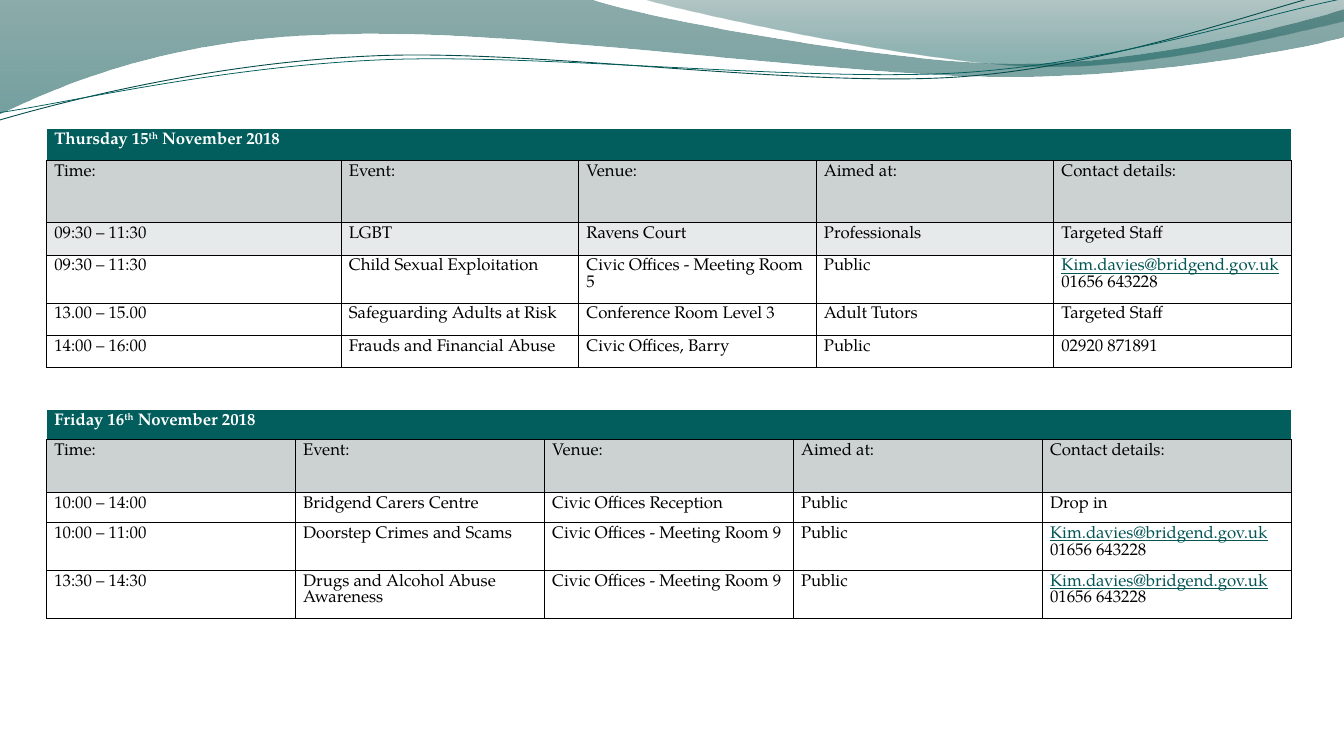
from math import cos, radians, sin

from lxml import etree
from pptx import Presentation
from pptx.dml.color import RGBColor
from pptx.oxml.ns import qn
from pptx.util import Cm, Pt

FONT = "TeX Gyre Pagella"
TEAL, GREY, PALE = "025E5C", "CCD2D2", "E7EAEA"
BLACK, WHITE, LINK = "000000", "FFFFFF", "035654"
TILT = -2.7

HEADS = ["Time:", "Event:", "Venue:", "Aimed at:", "Contact details:"]
KIM = "Kim.davies@bridgend.gov.uk\n01656 643228"
THURSDAY = [
    ["09:30 – 11:30", "LGBT", "Ravens Court", "Professionals", "Targeted Staff"],
    ["09:30 – 11:30", "Child Sexual Exploitation", "Civic Offices - Meeting Room 5", "Public", KIM],
    ["13.00 – 15.00", "Safeguarding Adults at Risk", "Conference Room Level 3", "Adult Tutors",
     "Targeted Staff"],
    ["14:00 – 16:00", "Frauds and Financial Abuse", "Civic Offices, Barry", "Public", "02920 871891"],
]
FRIDAY = [
    ["10:00 – 14:00", "Bridgend Carers Centre", "Civic Offices Reception", "Public", "Drop in"],
    ["10:00 – 11:00", "Doorstep Crimes and Scams", "Civic Offices - Meeting Room 9", "Public", KIM],
    ["13:30 – 14:30", "Drugs and Alcohol Abuse Awareness", "Civic Offices - Meeting Room 9",
     "Public", KIM],
]

# Outlines in cm: one point is a straight step, three points are a Bézier curve
SWEEP = [[(0, -0.03)], [(19.89, -0.03)], [(21.49, 0.56), (29.97, 2.13), (34.24, 2.13)],
         [(38.53, 2.13), (43.28, 0.86), (45.16, 0.3)], [(45.21, 1.22)],
         [(44.4, 1.47), (39.27, 2.57), (33.68, 2.57)],
         [(28.09, 2.54), (17.25, 0.94), (11.61, 1.14)],
         [(5.84, 1.19), (2.06, 2.82), (-0.05, 3.84)]]
CREST = [[(21.64, -0.03)], [(23.01, 0.38), (30.78, 2.08), (34.72, 2.21)],
         [(38.63, 2.34), (43.41, 1.09), (45.16, 0.71)], [(45.16, 0)]]
UPPER = [[(-0.03, 4.04)], [(2.16, 3.4), (7.14, 2.11), (12.5, 1.88)],
         [(17.86, 1.63), (26.75, 2.95), (32.16, 2.59)],
         [(37.59, 2.21), (42.39, 0.28), (45.09, -0.33)]]
LOWER = [[(0, 3.78)], [(2.13, 3.48), (7.39, 2.24), (12.8, 2.01)],
         [(18.19, 1.78), (26.95, 2.77), (32.36, 2.44)],
         [(37.74, 2.08), (42.49, 0.46), (45.16, -0.05)]]


def color(code):
    return RGBColor.from_string(code)


def level(steps, mid):
    """Turn the points back by the tilt, so that the shape itself can carry it."""
    a, (mx, my) = radians(-TILT), mid
    return [[(mx + (x - mx) * cos(a) - (y - my) * sin(a),
              my + (x - mx) * sin(a) + (y - my) * cos(a)) for x, y in step] for step in steps]


def outline(slide, left, top, steps, close):
    points = [(Cm(left + x), Cm(top + y)) for step in steps for x, y in step]
    pen = slide.shapes.build_freeform(*points[0])
    pen.add_line_segments(points[1:], close=close)
    shape = pen.convert_to_shape()
    shape.shadow.inherit = False
    # Join each three points into a curve
    lines = iter(list(shape._element.iter(qn("a:lnTo"))))
    for step in steps[1:]:
        first, *rest = [next(lines) for point in step]
        if rest:
            first.tag = qn("a:cubicBezTo")
            for line in rest:
                first.append(line[0])
                line.getparent().remove(line)
    return shape


def banner(slide, left, top):
    # Translucent waves: each stop is position, colour, opacity in percent
    waves = [(SWEEP, [(0, "004745", 45), (1, "00514F", 55)]),
             (CREST, [(0, "004240", 30), (0.8, "005553", 45)])]
    for steps, stops in waves:
        wave = outline(slide, left, top, steps, True)
        wave.line.fill.background()
        wave.fill.gradient()
        wave.fill.gradient_angle = 270
        for stop, (place, code, alpha) in zip(wave.fill.gradient_stops, stops):
            stop.position = place
            stop.color.rgb = color(code)
        tags = wave._element.spPr.iter(qn("a:srgbClr"))
        for tag, (place, code, alpha) in zip(tags, stops):
            etree.SubElement(tag, qn("a:alpha"), val=str(alpha * 1000))
    # Thin lines
    lines = [(UPPER, (22.52, 1.97), "034C4A", 0.85), (LOWER, (22.58, 1.99), TEAL, 0.75)]
    for steps, mid, code, width in lines:
        line = outline(slide, left, top, level(steps, mid), False)
        line.rotation = TILT
        line.fill.background()
        line.line.color.rgb = color(code)
        line.line.width = Pt(width)


def border(cell, codes):
    """Draw left, right, top and bottom edges."""
    props = cell._tc.get_or_add_tcPr()
    for side, code in zip("LRTB", codes):
        edge = etree.SubElement(props, qn("a:ln" + side), w=str(Pt(1)))
        fill = etree.SubElement(edge, qn("a:solidFill"))
        etree.SubElement(fill, qn("a:srgbClr"), val=code)


def style(run, code, bold=False):
    run.font.name = FONT
    run.font.size = Pt(16)
    run.font.bold = bold
    run.font.color.rgb = color(code)


def write(cell, text):
    cell.text_frame.text = text
    for para in cell.text_frame.paragraphs:
        para.line_spacing = Pt(16)
        link = "@" in para.text
        for run in para.runs:
            style(run, LINK if link else BLACK)
            run.font.underline = link


def heading(cell, day, month):
    para = cell.text_frame.paragraphs[0]
    para.line_spacing = Pt(16)
    for text in (day, "th", month):
        run = para.add_run()
        run.text = text
        style(run, WHITE, True)
        if text == "th":
            run._r.get_or_add_rPr().set("baseline", "30000")


def schedule(slide, box, day, rows, widths, heights, fills):
    grid = [HEADS] + rows
    table = slide.shapes.add_table(len(grid) + 1, len(HEADS), *map(Cm, box)).table
    table.first_row = table.horz_banding = False
    for col, width in zip(table.columns, widths):
        col.width = Cm(width)
    for row, height in zip(table.rows, heights):
        row.height = Cm(height)
    # Date bar
    bar = table.cell(0, 0)
    bar.merge(table.cell(0, len(HEADS) - 1))
    for cell in table.rows[0].cells:
        border(cell, [WHITE, WHITE, WHITE, BLACK])
        cell.fill.solid()
        cell.fill.fore_color.rgb = color(TEAL)
    heading(bar, day, " November 2018")
    # Column heads and events
    for r, texts in enumerate(grid):
        for c, text in enumerate(texts):
            cell = table.cell(r + 1, c)
            border(cell, [BLACK] * 4)
            if r < len(fills):
                cell.fill.solid()
                cell.fill.fore_color.rgb = color(fills[r])
            else:
                cell.fill.background()
            write(cell, text)


def main():
    deck = Presentation()
    deck.slide_width, deck.slide_height = Cm(45.16), Cm(25.4)
    slide = deck.slides.add_slide(deck.slide_layouts[6])
    banner(slide, 0, 0)
    schedule(slide, (1.57, 4.32, 41.82, 8.02), "Thursday 15", THURSDAY,
             [9.9] + [7.98] * 4, [1.07, 2.1, 1.08, 1.61, 1.08, 1.08], [GREY, PALE])
    schedule(slide, (1.57, 13.76, 41.82, 7.01), "Friday 16", FRIDAY,
             [8.365] * 5, [1.01, 1.77, 1.01, 1.61, 1.61], [GREY])
    deck.save("out.pptx")


if __name__ == "__main__":
    main()
